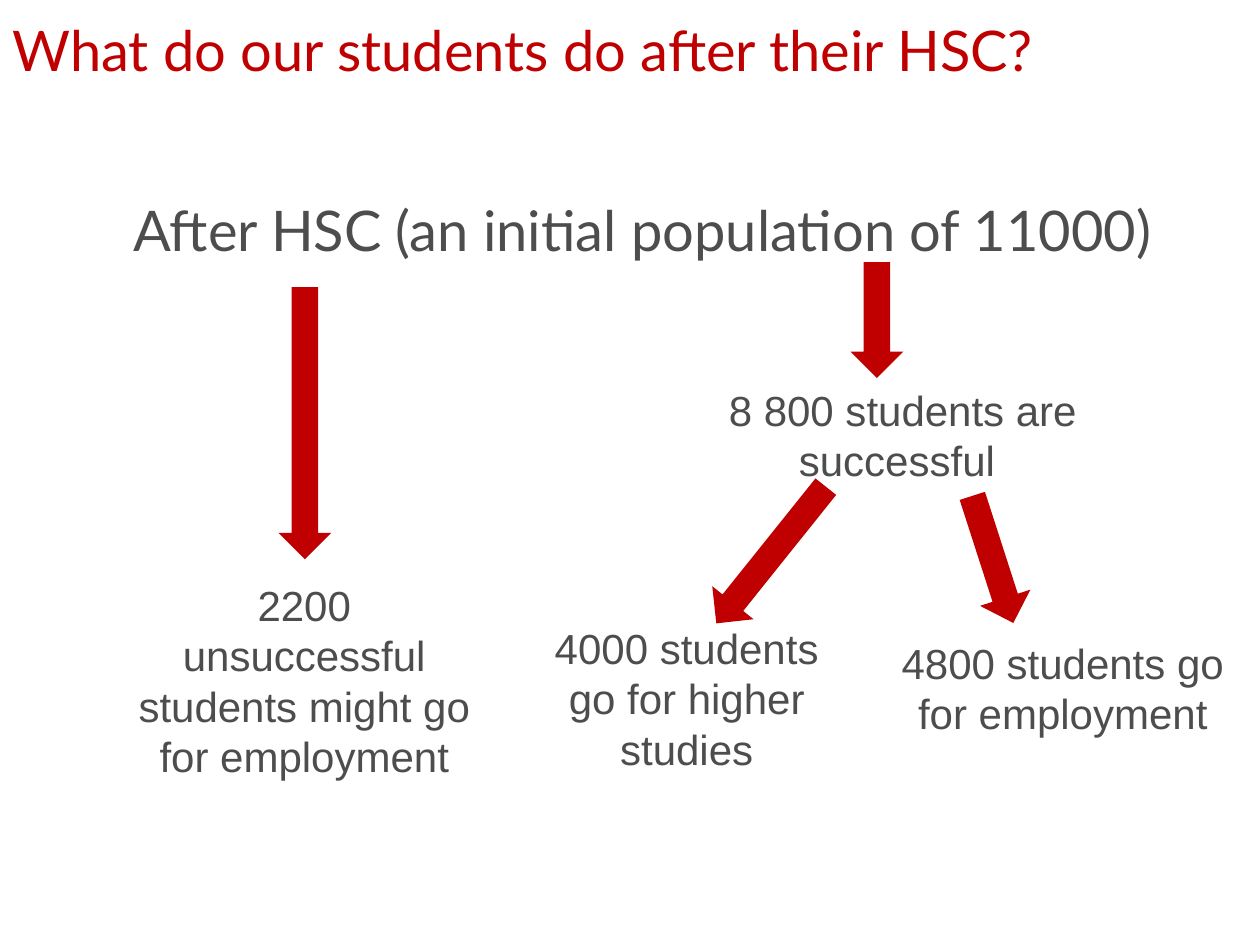
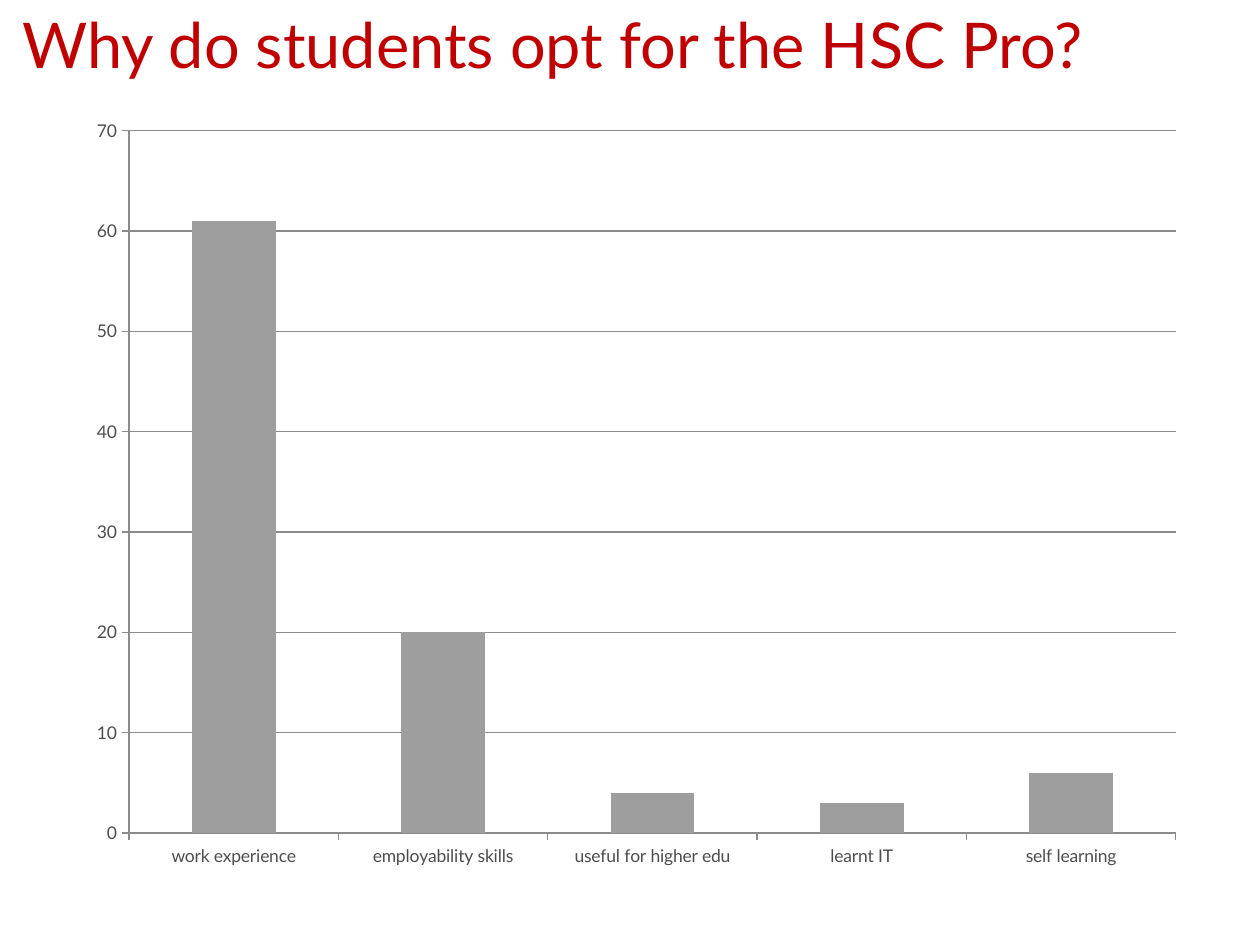
from dataclasses import dataclass

from pptx import Presentation
from pptx.chart.data import CategoryChartData
from pptx.dml.color import RGBColor
from pptx.enum.chart import XL_CHART_TYPE, XL_TICK_MARK
from pptx.enum.shapes import MSO_SHAPE
from pptx.enum.text import MSO_ANCHOR, PP_ALIGN
from pptx.util import Inches, Pt


@dataclass(frozen=True)
class Theme:
    red: RGBColor = RGBColor(0xC0, 0x00, 0x00)
    ink: RGBColor = RGBColor(0x4D, 0x4D, 0x4D)
    bar: RGBColor = RGBColor(0x9E, 0x9E, 0x9E)
    rule: RGBColor = RGBColor(0x8B, 0x8B, 0x8B)
    head: str = "Lato"
    body: str = "Arial"
    large: int = 36
    lead: int = 32
    note: int = 24
    tick: int = 10


THEME = Theme()

FLOW = {
    "title": "What do our students do after their HSC?",
    "lead": "After HSC (an initial population of 11000)",
    "notes": [
        ("8 800 students are successful ", (5.33, 3, 3.67, 0.91)),
        ("4000 students go for higher studies", (4.11, 4.89, 2.68, 1.31)),
        ("4800 students go for employment", (7.02, 5.01, 2.83, 0.91)),
        ("2200 unsuccessful students might go for employment",
         (1, 4.55, 2.83, 1.72)),
    ],
    "arrows": [
        (6.75, 2.08, 0.92, 0),
        (7.67, 3.91, 1.06, 342.1),
        (5.91, 3.71, 1.39, 38.7),
        (2.21, 2.28, 2.16, 0),
    ],
}
ARROW_WIDTH = 0.42

REASONS = {
    "title": "Why do students opt for the HSC Pro?",
    "values": {
        "work experience": 61,
        "employability skills": 20,
        "useful for higher edu": 4,
        "learnt IT": 3,
        "self learning": 6,
    },
}


def place(*box):
    return [Inches(v) for v in box]


def write(slide, text, box, size=THEME.note, font=THEME.body,
          color=THEME.ink, align=PP_ALIGN.CENTER, anchor=MSO_ANCHOR.TOP):
    frame = slide.shapes.add_textbox(*place(*box)).text_frame
    frame.word_wrap = True
    frame.vertical_anchor = anchor
    para = frame.paragraphs[0]
    para.text = text
    para.alignment = align
    para.font.size = Pt(size)
    para.font.name = font
    para.font.color.rgb = color


def head(slide, text, box, size):
    write(slide, text, box, size=size, font=THEME.head, color=THEME.red,
          align=PP_ALIGN.LEFT, anchor=MSO_ANCHOR.MIDDLE)


def arrow(slide, left, top, height, turn):
    shape = slide.shapes.add_shape(
        MSO_SHAPE.DOWN_ARROW, *place(left, top, ARROW_WIDTH, height))
    shape.rotation = turn
    shape.shadow.inherit = False
    shape.fill.solid()
    shape.fill.fore_color.rgb = THEME.red
    shape.line.fill.background()


def rule(line):
    line.color.rgb = THEME.rule
    line.width = Pt(0.75)


def graph(slide, values, box):
    data = CategoryChartData()
    data.categories = list(values)
    data.add_series("Series 1", list(values.values()))
    chart = slide.shapes.add_chart(
        XL_CHART_TYPE.COLUMN_CLUSTERED, *place(*box), data).chart
    chart.has_legend = False
    chart.has_title = False
    chart.font.name = THEME.head
    chart.font.size = Pt(THEME.tick)
    chart.font.color.rgb = THEME.ink
    for axis in (chart.category_axis, chart.value_axis):
        axis.major_tick_mark = XL_TICK_MARK.OUTSIDE
        axis.minor_tick_mark = XL_TICK_MARK.NONE
        rule(axis.format.line)
    scale = chart.value_axis
    scale.minimum_scale, scale.maximum_scale = 0, 70
    scale.major_unit = 10
    scale.has_major_gridlines = True
    rule(scale.major_gridlines.format.line)
    plot = chart.plots[0]
    plot.gap_width = 150
    plot.vary_by_categories = False
    fill = plot.series[0].format.fill
    fill.solid()
    fill.fore_color.rgb = THEME.bar


def main():
    deck = Presentation()
    deck.slide_width, deck.slide_height = place(10, 7.5)
    blank = deck.slide_layouts[6]

    flow = deck.slides.add_slide(blank)
    head(flow, FLOW["title"], (0, 0.1, 9.5, 0.58), THEME.lead)
    write(flow, FLOW["lead"], (0.66, 1.5, 8.88, 4.5),
          size=THEME.lead, font=THEME.head)
    for item in FLOW["arrows"]:
        arrow(flow, *item)
    for text, box in FLOW["notes"]:
        write(flow, text, box)

    why = deck.slides.add_slide(blank)
    head(why, REASONS["title"], (0.08, 0.05, 9.59, 0.58), THEME.large)
    graph(why, REASONS["values"], (0.59, 0.83, 8.92, 6.17))

    deck.save("out.pptx")


if __name__ == "__main__":
    main()
